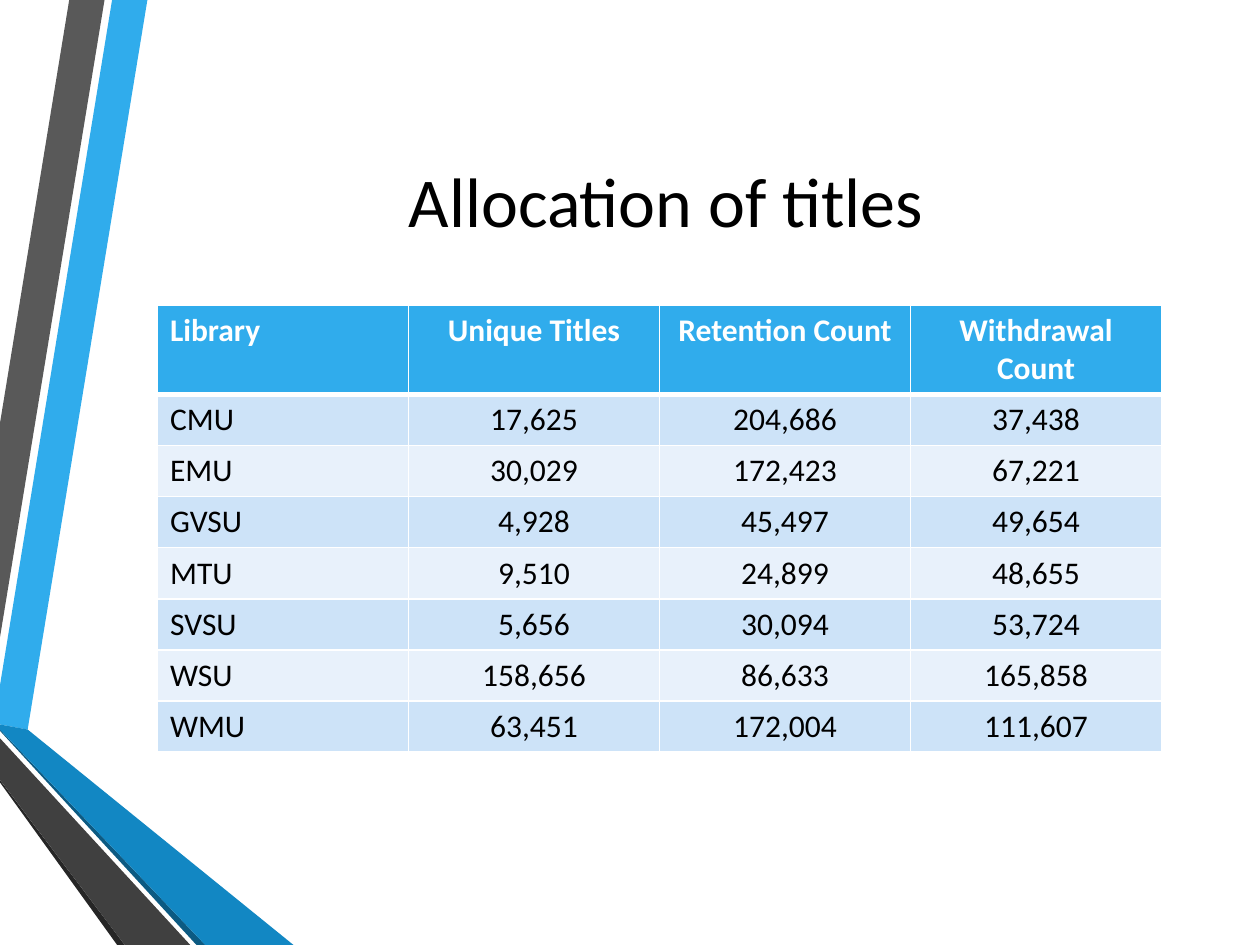
"""Build the slide that shows how titles were allocated among libraries."""
from lxml.etree import SubElement
from pptx import Presentation
from pptx.dml.color import RGBColor as Color
from pptx.enum.text import MSO_ANCHOR as Anchor, PP_ALIGN as Align
from pptx.oxml.ns import qn
from pptx.util import Inches, Pt

THEME = {
    "font": "Calibri", "title_size": 40, "table_size": 18,
    "text": "000000", "white": "FFFFFF",
    "bright_blue": "30ACEC", "blue": "1287C3", "deep_blue": "0C5A82",
    "gray": "595959", "dark_gray": "404040", "black_gray": "262626",
    "odd_row": "CDE3F8", "even_row": "E8F1FB",
}
GRID_COLUMNS = 1000


def write_text(frame, text, size, color="text", bold=False, align=Align.CENTER):
    """Put one formatted paragraph in a text frame."""
    frame.text = text
    paragraph = frame.paragraphs[0]
    paragraph.alignment = align
    font = paragraph.runs[0].font
    font.name, font.size, font.bold = THEME["font"], Pt(THEME[size]), bold
    font.color.rgb = Color.from_string(THEME[color])


def draw_border(cell, side, points):
    """Draw a white line on one side of a table cell."""
    properties = cell._tc.get_or_add_tcPr()
    line = SubElement(properties, qn(f"a:ln{side}"), w=str(Pt(points)))
    fill = SubElement(line, qn("a:solidFill"))
    SubElement(fill, qn("a:srgbClr"), val=THEME["white"])


presentation = Presentation()
presentation.slide_width, presentation.slide_height = Inches(10), Inches(7.5)
unit = presentation.slide_width // GRID_COLUMNS
slide = presentation.slides.add_slide(presentation.slide_layouts[5])
slide.background.fill.solid()
slide.background.fill.fore_color.rgb = Color.from_string(THEME["white"])

ribbons = [
    ("bright_blue", [(0, 544), (0, 575), (22, 579), (117, 0), (89, 0)]),
    ("gray", [(83, 0), (55, 0), (0, 336), (0, 506)]),
    ("black_gray", [(0, 619), (0, 621), (93, 750), (99, 750)]),
    ("deep_blue", [(0, 579), (0, 580), (156, 750), (163, 750)]),
    ("blue", [(0, 579), (163, 750), (233, 750), (22, 579), (0, 575)]),
    ("dark_gray", [(0, 619), (99, 750), (151, 750), (0, 586)]),
]
for color, points in ribbons:
    builder = slide.shapes.build_freeform(*points[0], scale=unit)
    builder.add_line_segments(points[1:], close=True)
    ribbon = builder.convert_to_shape()
    ribbon.shadow.inherit = False
    ribbon.fill.solid()
    ribbon.fill.fore_color.rgb = Color.from_string(THEME[color])
    ribbon.line.fill.background()

title = slide.shapes.title
title.left, title.top = 107 * unit, 50 * unit
title.width, title.height = 843 * unit, 217 * unit
title.text_frame.vertical_anchor = Anchor.MIDDLE
write_text(title.text_frame, "Allocation of titles", "title_size")
slide.shapes._spTree.append(title._element)

rows = [
    ("Library", "Unique Titles", "Retention Count", "Withdrawal Count"),
    ("CMU", "17,625", "204,686", "37,438"),
    ("EMU", "30,029", "172,423", "67,221"),
    ("GVSU", "4,928", "45,497", "49,654"),
    ("MTU", "9,510", "24,899", "48,655"),
    ("SVSU", "5,656", "30,094", "53,724"),
    ("WSU", "158,656", "86,633", "165,858"),
    ("WMU", "63,451", "172,004", "111,607"),
]
header_height, row_height = 70 * unit, int(40.5 * unit)
table_height = header_height + (len(rows) - 1) * row_height
table = slide.shapes.add_table(
    len(rows), len(rows[0]), 125 * unit, 242 * unit, 797 * unit, table_height
).table

for row_index, row in enumerate(rows):
    header = row_index == 0
    table.rows[row_index].height = header_height if header else row_height
    fill = "bright_blue" if header else "odd_row" if row_index % 2 else "even_row"
    for column_index, text in enumerate(row):
        cell = table.cell(row_index, column_index)
        write_text(
            cell.text_frame, text, "table_size", bold=header,
            color="white" if header else "text",
            align=Align.CENTER if column_index else Align.LEFT,
        )
        for side in "LRTB":
            heavy = (row_index, side) in [(0, "B"), (1, "T")]
            draw_border(cell, side, 3 if heavy else 1)
        cell.fill.solid()
        cell.fill.fore_color.rgb = Color.from_string(THEME[fill])

presentation.save("out.pptx")
